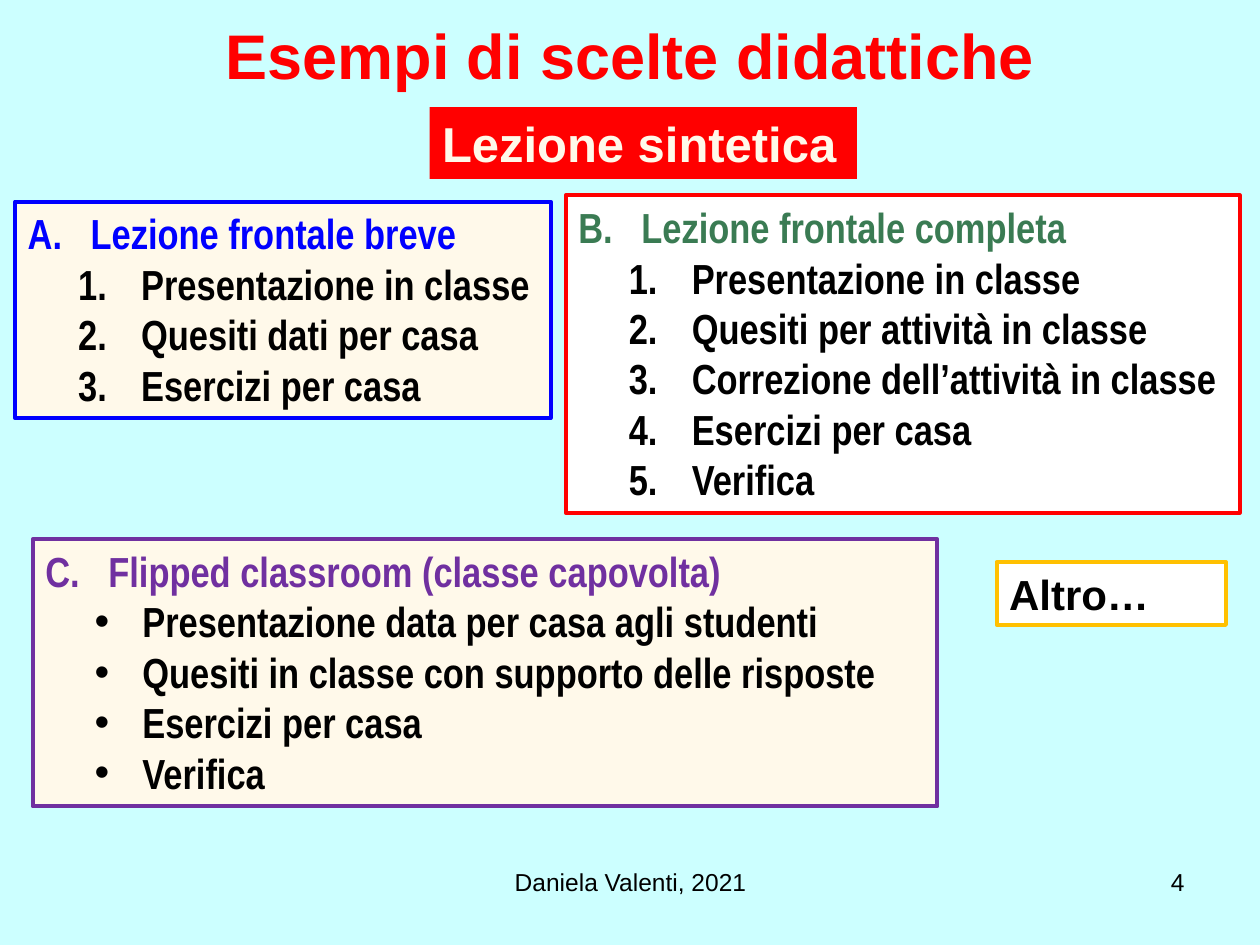
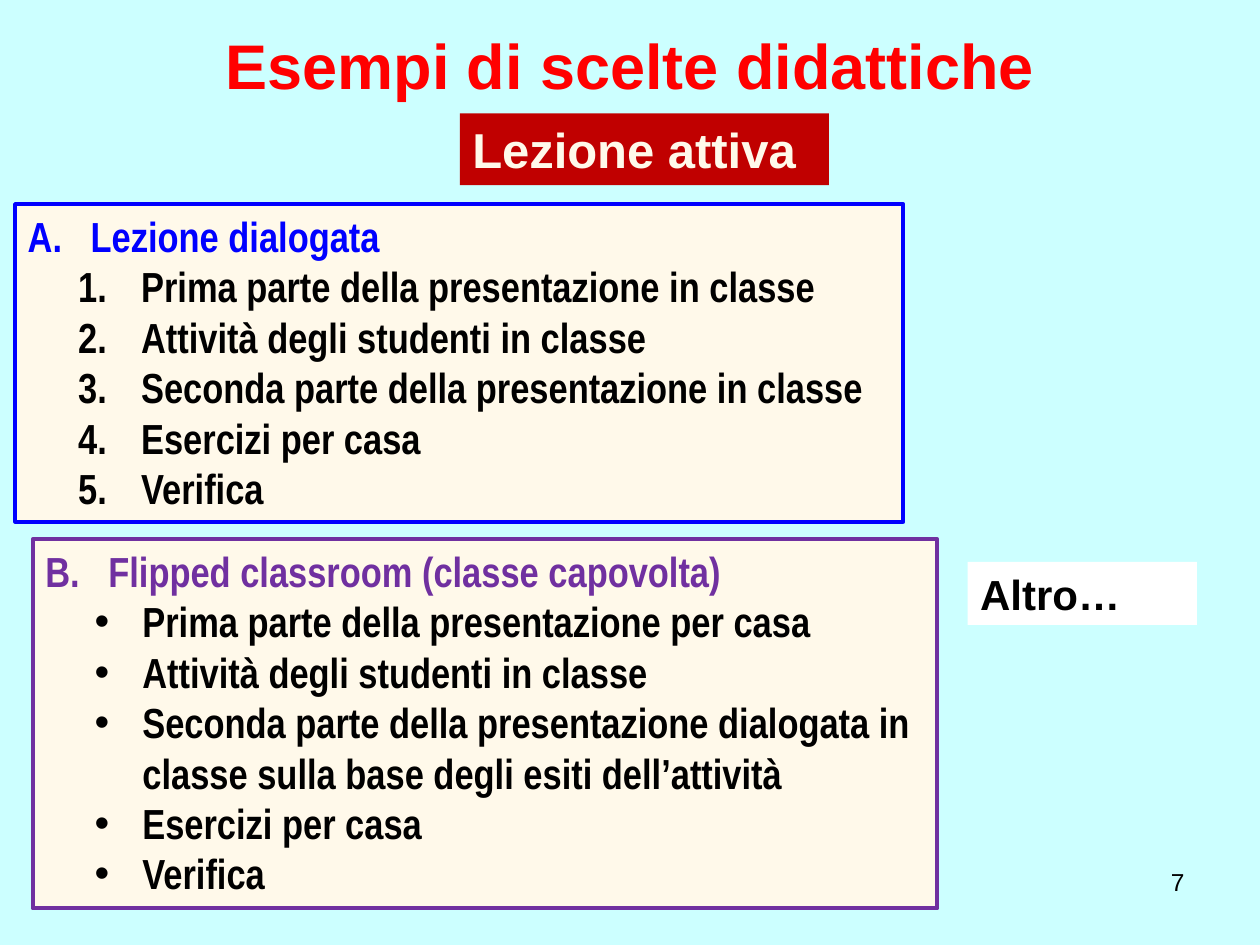
from dataclasses import dataclass

from lxml.etree import SubElement
from pptx import Presentation
from pptx.dml.color import RGBColor as Rgb
from pptx.enum.text import MSO_ANCHOR as Anchor, MSO_AUTO_SIZE as AutoSize, PP_ALIGN as Align
from pptx.oxml.ns import qn
from pptx.util import Inches, Pt


@dataclass(frozen=True)
class Theme:
    # Colours
    background: str = "CCFFFF"
    cream: str = "FFF9EA"
    white: str = "FFFFFF"
    black: str = "000000"
    red: str = "FF0000"
    dark_red: str = "C00000"
    blue: str = "0000FF"
    green: str = "3A7B53"
    purple: str = "7030A0"
    amber: str = "FFC000"
    # Type
    face: str = "Arial"
    narrow_face: str = "Arial Narrow"
    title_size: int = 36
    tag_size: int = 28
    list_size: int = 24
    footer_size: int = 14
    border_width: float = 2.25


THEME = Theme()


@dataclass(frozen=True)
class Panel:
    box: tuple
    letter: int
    heading: str
    items: tuple
    accent: str
    border: str
    fill: str = THEME.cream
    numbered: bool = True


# Shared formatting
def place(part, box):
    part.left, part.top, part.width, part.height = map(Inches, box)


def style(paragraph, size, color, bold=True, face=THEME.face, align=Align.LEFT):
    paragraph.alignment = align
    font = paragraph.font
    font.name, font.size, font.bold = face, Pt(size), bold
    font.color.rgb = Rgb.from_string(color)


def paint(part, fill, border=None):
    part.fill.solid()
    part.fill.fore_color.rgb = Rgb.from_string(fill)
    if border:
        part.line.color.rgb = Rgb.from_string(border)
        part.line.width = Pt(THEME.border_width)


def set_bullet(paragraph, margin, hanging, scheme=None, start=1):
    """Number the paragraph by scheme, or give it a round bullet."""
    properties = paragraph._p.get_or_add_pPr()
    properties.set("marL", str(Inches(margin)))
    properties.set("indent", str(-Inches(hanging)))
    SubElement(properties, qn("a:buFont"), typeface=THEME.face)
    if scheme:
        number = SubElement(properties, qn("a:buAutoNum"), type=scheme)
        if start > 1:
            number.set("startAt", str(start))
    else:
        SubElement(properties, qn("a:buChar"), char="•")


# Regions
def add_title(slide, text, top):
    title = slide.shapes.title
    place(title, (0.43, top, 9.14, 0.94))
    title.text_frame.text = text
    title.text_frame.vertical_anchor = Anchor.MIDDLE
    style(title.text_frame.paragraphs[0], THEME.title_size, THEME.red, align=Align.CENTER)


def add_label(slide, box, text, size, color, **font_options):
    label = slide.shapes.add_textbox(*map(Inches, box))
    label.text_frame.word_wrap = True
    label.text_frame.text = text
    style(label.text_frame.paragraphs[0], size, color, **font_options)
    return label


def add_tag(slide, box, text, fill):
    paint(add_label(slide, box, text, THEME.tag_size, THEME.cream), fill)


def add_other(slide, left, border=None):
    other = add_label(slide, (left, 4.46, 1.82, 0.5), "Altro…", THEME.list_size, THEME.black)
    paint(other, THEME.white, border)


def add_footer(slide, number, author=None):
    if author:
        add_label(slide, (3.42, 6.83, 3.17, 0.52), author, THEME.footer_size,
                  THEME.black, bold=False, align=Align.CENTER)
    add_label(slide, (7.17, 6.83, 2.33, 0.52), number, THEME.footer_size,
              THEME.black, bold=False, align=Align.RIGHT)


def fill_panel(body, panel):
    place(body, panel.box)
    paint(body, panel.fill, panel.border)
    frame = body.text_frame
    frame.word_wrap = True
    frame.auto_size = AutoSize.NONE
    frame.vertical_anchor = Anchor.TOP
    frame.text = "\n".join((panel.heading, *panel.items))
    heading, *items = frame.paragraphs

    set_bullet(heading, 0.5, 0.5, "alphaUcPeriod", panel.letter)
    style(heading, THEME.list_size, panel.accent, face=THEME.narrow_face)
    for item in items:
        item.level = 1
        if panel.numbered:
            set_bullet(item, 0.9, 0.5, "arabicPeriod")
        else:
            set_bullet(item, 0.77, 0.38)
        style(item, THEME.list_size, THEME.black, face=THEME.narrow_face)
    for paragraph in (heading, *items):
        paragraph.space_before = Pt(0)


# Slide type: title, tag and lettered panels
def add_choices_slide(deck, title_top, panels):
    layout_name = "Two Content" if len(panels) == 2 else "Comparison"
    slide = deck.slides.add_slide(deck.slide_layouts.get_by_name(layout_name))
    add_title(slide, "Esempi di scelte didattiche", title_top)
    bodies = [p for p in slide.placeholders if p.placeholder_format.idx]
    for body, panel in zip(bodies, panels):
        fill_panel(body, panel)
    for unused in bodies[len(panels):]:
        unused.element.getparent().remove(unused.element)
    return slide


def add_concise_lesson(deck):
    slide = add_choices_slide(deck, -0.04, (
        Panel((0.12, 1.6, 4.25, 1.72), 1, "Lezione frontale breve",
              ("Presentazione in classe", "Quesiti dati per casa", "Esercizi per casa"),
              THEME.blue, THEME.blue),
        Panel((4.49, 1.55, 5.35, 2.52), 2, "Lezione frontale completa",
              ("Presentazione in classe", "Quesiti per attività in classe",
               "Correzione dell’attività in classe", "Esercizi per casa", "Verifica"),
              THEME.green, THEME.red, THEME.white),
        Panel((0.26, 4.28, 7.18, 2.12), 3, "Flipped classroom (classe capovolta)",
              ("Presentazione data per casa agli studenti",
               "Quesiti in classe con supporto delle risposte",
               "Esercizi per casa", "Verifica"),
              THEME.purple, THEME.purple, numbered=False),
    ))
    add_tag(slide, (3.41, 0.85, 3.39, 0.57), "Lezione sintetica", THEME.red)
    add_other(slide, 7.91, THEME.amber)
    add_footer(slide, "4", "Daniela Valenti, 2021")


def add_active_lesson(deck):
    slide = add_choices_slide(deck, 0.04, (
        Panel((0.12, 1.62, 7.05, 2.52), 1, "Lezione dialogata",
              ("Prima parte della presentazione in classe",
               "Attività degli studenti in classe",
               "Seconda parte della presentazione in classe",
               "Esercizi per casa", "Verifica"),
              THEME.blue, THEME.blue),
        Panel((0.26, 4.28, 7.18, 2.93), 2, "Flipped classroom (classe capovolta)",
              ("Prima parte della presentazione per casa",
               "Attività degli studenti in classe",
               "Seconda parte della presentazione dialogata in classe "
               "sulla base degli esiti dell’attività",
               "Esercizi per casa", "Verifica"),
              THEME.purple, THEME.purple, numbered=False),
    ))
    add_tag(slide, (3.65, 0.9, 2.93, 0.57), "Lezione attiva", THEME.dark_red)
    add_other(slide, 7.68)
    add_footer(slide, "7")


def main():
    deck = Presentation()
    deck.slide_width, deck.slide_height = Inches(10), Inches(7.5)
    backdrop = deck.slide_master.background.fill
    backdrop.solid()
    backdrop.fore_color.rgb = Rgb.from_string(THEME.background)
    add_concise_lesson(deck)
    add_active_lesson(deck)
    deck.save("out.pptx")


if __name__ == "__main__":
    main()
